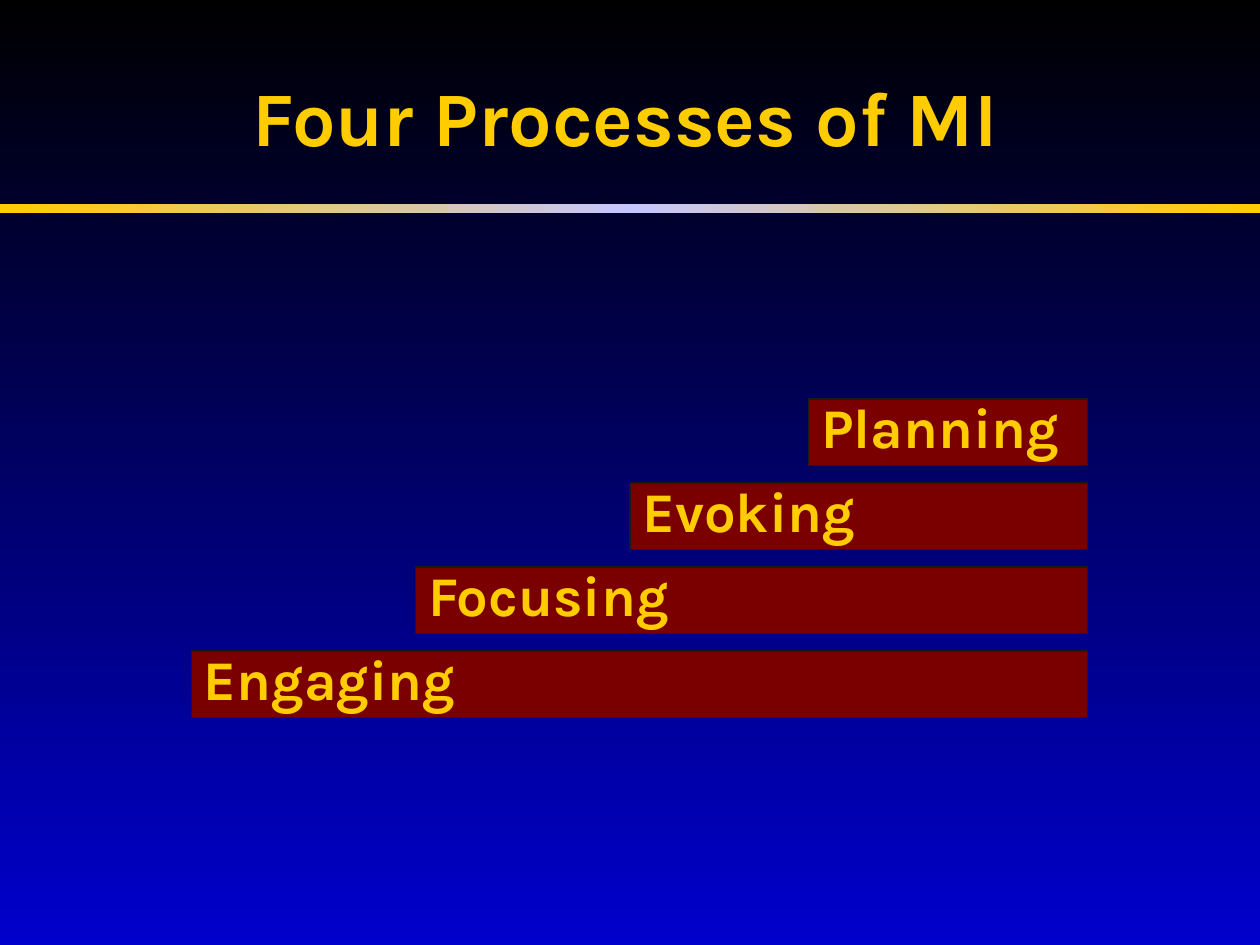
from lxml.etree import SubElement as Sub
from pptx import Presentation
from pptx.dml.color import RGBColor as Rgb
from pptx.enum.shapes import MSO_SHAPE as Shape
from pptx.enum.text import MSO_ANCHOR as Anchor, MSO_AUTO_SIZE as Auto, PP_ALIGN as Align
from pptx.oxml.ns import qn
from pptx.util import Pt

GOLD, RED, EDGE = "FFCC00", "7A0000", "1A1A1A"
RIGHT, TOP, STEP, HIGH = 621.4, 228, 48, 38.2
BARS = [("Engaging", 109.4), ("Focusing", 237.6), ("Evoking", 360), ("Planning", 462.2)]


def tint(color, code):
    """Set a colour from a hex string."""
    color.rgb = Rgb.from_string(code)


def blend(fill, node, angle, codes):
    """Fill with evenly spaced gradient stops."""
    fill.gradient()
    fill.gradient_angle = angle
    stops = next(node.iter(qn("a:gsLst")))
    for stop in list(stops):
        stops.remove(stop)
    for i, code in enumerate(codes):
        stop = Sub(stops, qn("a:gs"), pos=str(100000 * i // (len(codes) - 1)))
        Sub(stop, qn("a:srgbClr"), val=code)


def write(frame, text, size, align, anchor):
    """Write one bold gold run into a text frame."""
    frame.word_wrap = True
    frame.vertical_anchor = anchor
    para = frame.paragraphs[0]
    para.alignment = align
    run = para.add_run()
    run.text = text
    font = run.font
    font.name, font.size, font.bold = "Karla", Pt(size), True
    tint(font.color, GOLD)
    return para


def block(slide, left, top, width, height):
    """Add a rectangle without a shadow."""
    box = slide.shapes.add_shape(Shape.RECTANGLE, Pt(left), Pt(top), Pt(width), Pt(height))
    box.shadow.inherit = False
    return box


def rule(slide):
    """Add the shaded line below the title."""
    box = block(slide, 0, 116.6, 720, 5)
    blend(box.fill, box._element, 0, [GOLD, "C5C5FF", GOLD])
    box.line.fill.background()


def title(slide, text):
    """Add the centred title."""
    box = slide.shapes.add_textbox(Pt(72), Pt(18), Pt(571), Pt(96))
    write(box.text_frame, text, 44, Align.CENTER, Anchor.MIDDLE)


def bar(slide, text, left, top):
    """Add one labelled step that ends at the common right edge."""
    box = block(slide, left, top, RIGHT - left, HIGH)
    box.fill.solid()
    tint(box.fill.fore_color, RED)
    tint(box.line.color, EDGE)
    box.line.width = Pt(0.75)
    para = write(box.text_frame, text, 32, Align.LEFT, Anchor.TOP)
    para.line_spacing = 0.8
    box.text_frame.auto_size = Auto.SHAPE_TO_FIT_TEXT


def main():
    """Build and save the slide."""
    deck = Presentation()
    deck.slide_width, deck.slide_height = Pt(720), Pt(540)
    slide = deck.slides.add_slide(deck.slide_layouts[6])
    blend(slide.background.fill, slide._element, 270, ["000000", "0000CC"])
    rule(slide)
    title(slide, "Four Processes of MI")
    for i, (text, left) in enumerate(BARS):
        bar(slide, text, left, TOP + STEP * (len(BARS) - 1 - i))
    deck.save("out.pptx")


if __name__ == "__main__":
    main()
